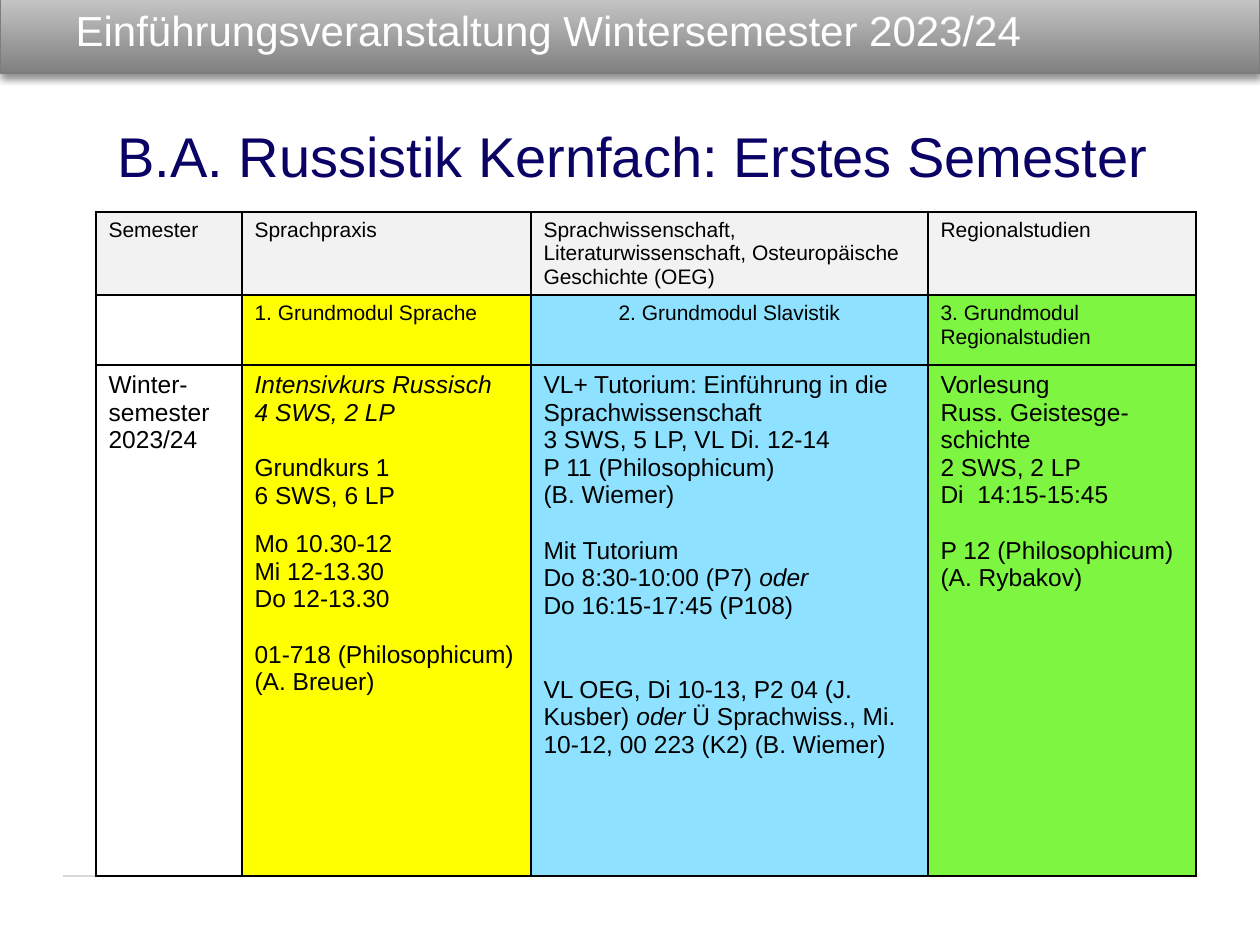
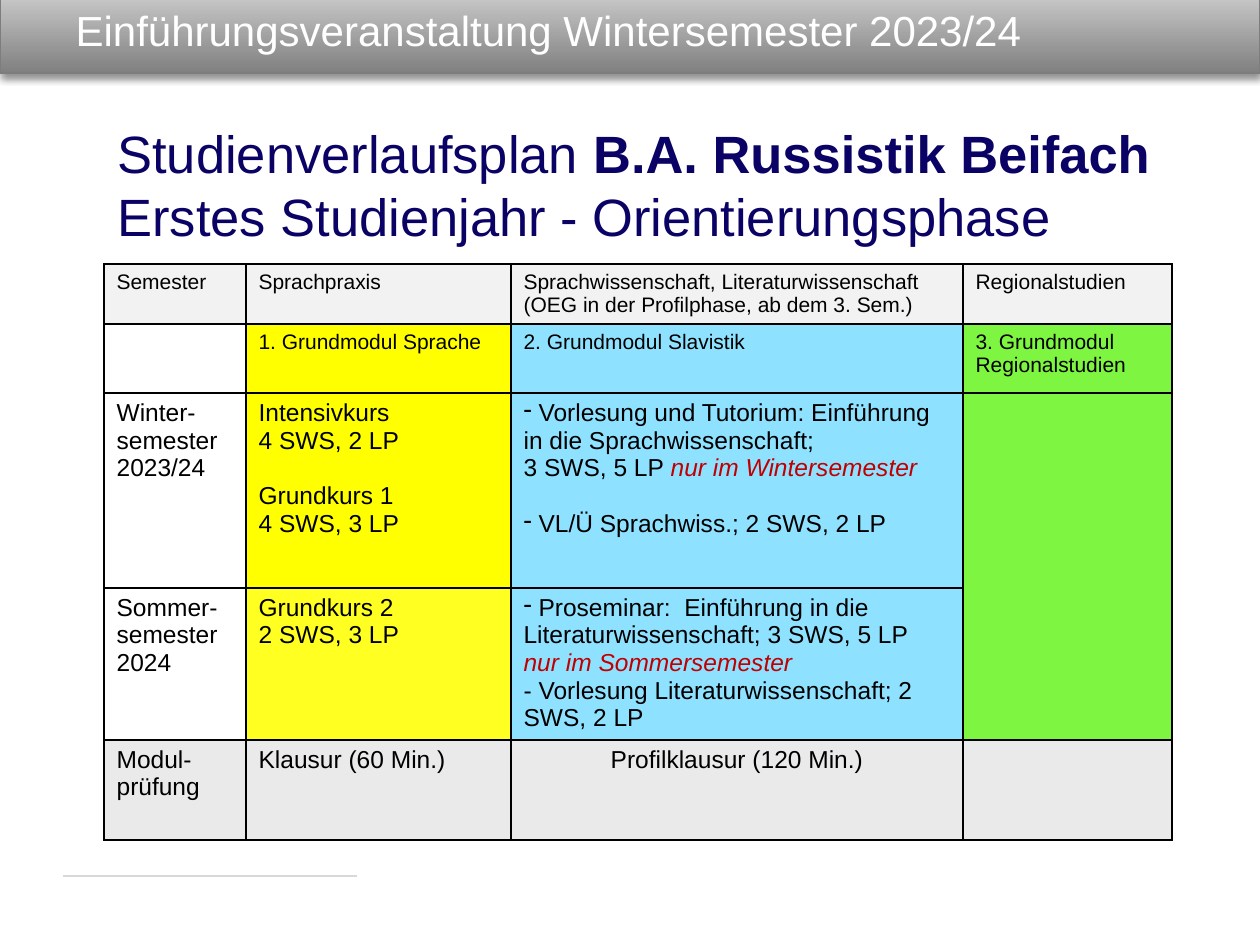
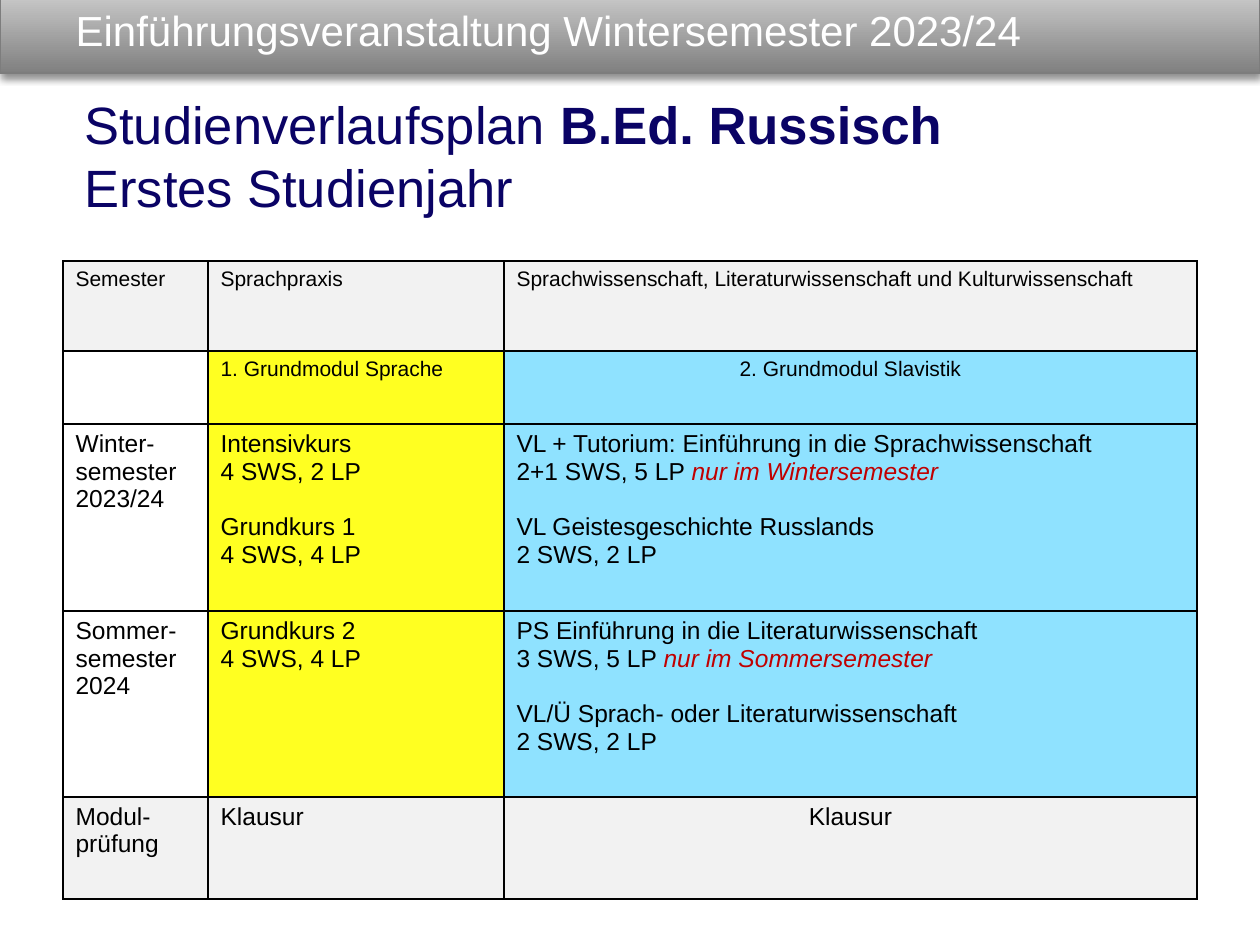
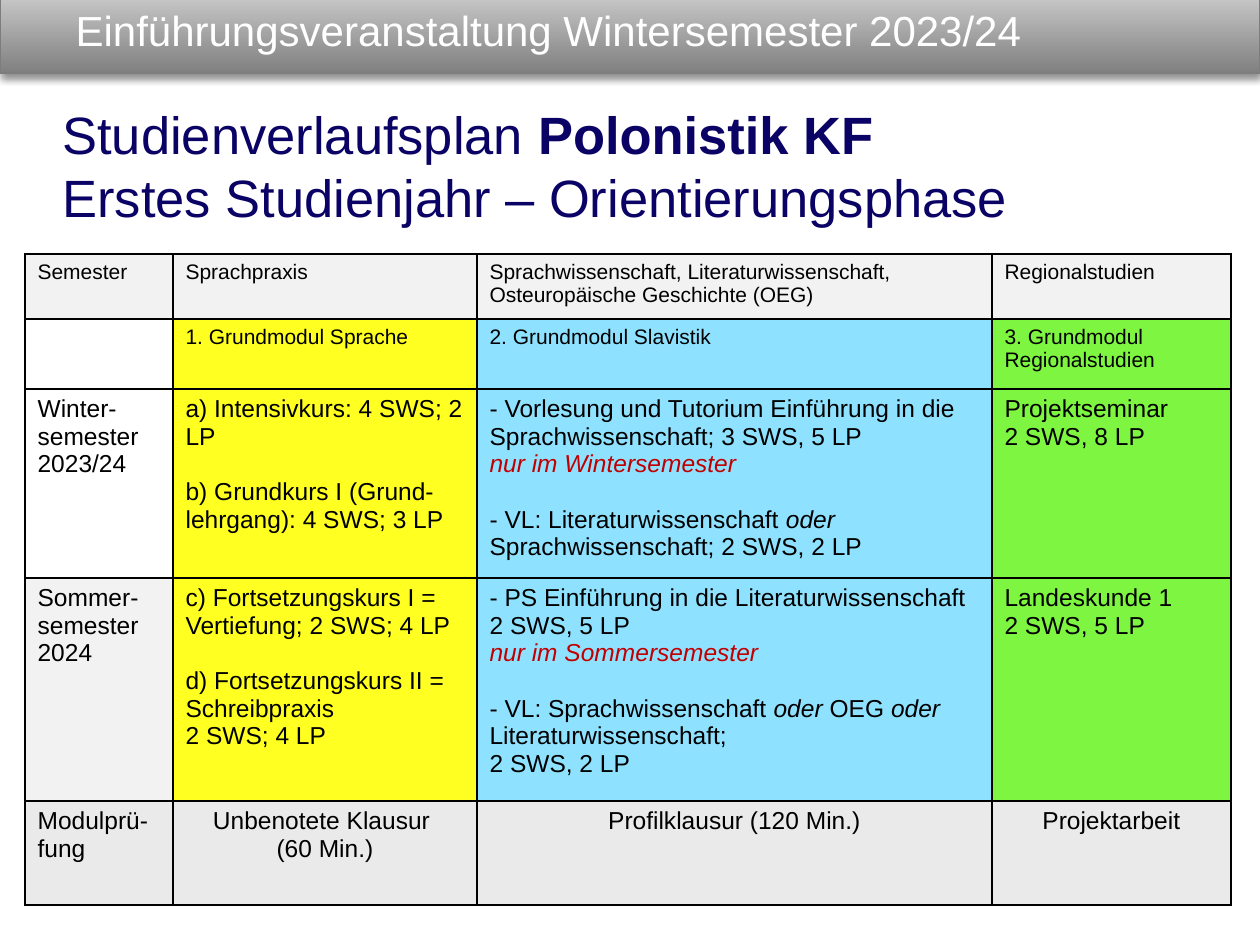
from dataclasses import dataclass

from pptx import Presentation
from pptx.dml.color import RGBColor
from pptx.enum.shapes import MSO_CONNECTOR, MSO_SHAPE
from pptx.enum.text import MSO_ANCHOR, MSO_AUTO_SIZE, PP_ALIGN
from pptx.oxml import parse_xml
from pptx.oxml.ns import nsdecls, qn
from pptx.util import Emu, Pt

# Shared style
FONT = "Arial"
BLACK, WHITE, NAVY, RED = "000000", "FFFFFF", "0A0365", "C00000"
HEADER = "Einführungsveranstaltung Wintersemester 2023/24"
FILLS = {
    "-": None,        # plain
    "h": "F2F2F2",    # heading grey
    "e": "EAEAEA",    # exam grey
    "Y": "FFFF00",    # language module
    "y": "FFFF21",    # language module, lighter
    "b": "8FE2FF",    # Slavic studies module
    "g": "7DF541",    # regional studies module
}
HEAD_SIZE, BODY_SIZE = 12, 14
GAP = 16              # one body line, in points


@dataclass(frozen=True)
class Run:
    text: str
    bold: bool = False
    italic: bool = False
    color: str | None = None


@dataclass(frozen=True)
class Para:
    runs: tuple[Run, ...]
    before: int = 0
    center: bool = False
    dash: bool = False


@dataclass(frozen=True)
class Box:
    x: int
    y: int
    w: int
    h: int


@dataclass(frozen=True)
class Plan:
    heading: list[Para]
    heading_box: Box
    heading_size: int
    left: int
    top: int
    cols: list[int]
    rows: list[int]
    fills: list[str]
    cells: list[list[list[Para]]]
    merge: tuple[int, int, int, int] | None = None


def px(n: int) -> Emu:
    return Emu(round(n * 914400 / 126))


def rgb(value: str) -> RGBColor:
    return RGBColor.from_string(value)


# Text building
def line(*parts: str | Run, before: int = 0, center: bool = False, dash: bool = False) -> Para:
    runs = tuple(Run(part) if isinstance(part, str) else part for part in parts)
    return Para(runs, before, center, dash)


def lines(*texts: str) -> list[Para]:
    return [line(text) for text in texts]


def centered(*texts: str) -> list[Para]:
    return [line(text, center=True) for text in texts]


def italic(text: str) -> Run:
    return Run(text, italic=True)


def bold(text: str) -> Run:
    return Run(text, bold=True)


def only_in(season: str) -> Run:
    return Run(f"nur im {season}semester", italic=True, color=RED)


def write(tf, paras: list[Para], size: int, color: str) -> None:
    for i, para in enumerate(paras):
        p = tf.paragraphs[0] if i == 0 else tf.add_paragraph()
        p.alignment = PP_ALIGN.CENTER if para.center else PP_ALIGN.LEFT
        if para.before:
            p.space_before = Pt(para.before)
        if para.dash:
            pPr = p._p.get_or_add_pPr()
            pPr.set("marL", "0")
            pPr.set("indent", "0")
            pPr.append(parse_xml(f'<a:buChar {nsdecls("a")} char="-"/>'))
        for run in para.runs:
            r = p.add_run()
            r.text = run.text
            r.font.name = FONT
            r.font.size = Pt(size)
            r.font.bold = run.bold
            r.font.italic = run.italic
            r.font.color.rgb = rgb(run.color or color)


# Band and footer line, placed once on the layout
def decorate_layout(s, layout) -> None:
    band = s.shapes.add_shape(MSO_SHAPE.RECTANGLE, px(0), px(-10), px(1260), px(83))
    band.fill.gradient()
    band.fill.gradient_angle = 90
    for stop, color in zip(band.fill.gradient_stops, ("808080", "CDCDCD")):
        stop.color.rgb = rgb(color)
    for stop, position in zip(band.fill.gradient_stops, (0, 1)):
        stop.position = position
    band.line.color.rgb = rgb("7D7D7D")
    band.line.width = Pt(0.75)
    band.shadow.inherit = False
    band.element.spPr.find(qn("a:effectLst")).append(parse_xml(
        f'<a:outerShdw {nsdecls("a")} blurRad="{Pt(4)}" dist="{Pt(3)}" dir="5400000" rotWithShape="0">'
        f'<a:srgbClr val="{BLACK}"><a:alpha val="43000"/></a:srgbClr></a:outerShdw>'))

    rule = s.shapes.add_connector(MSO_CONNECTOR.STRAIGHT, px(63), px(876), px(357), px(876))
    rule.line.color.rgb = rgb("D8D8D8")
    rule.line.width = Pt(0.75)
    rule.element.spPr.append(parse_xml(f'<a:effectLst {nsdecls("a")}/>'))

    for shape in (rule, band):
        layout.shapes.element.insert(2, shape.element)


def add_header(s) -> None:
    title = s.shapes.title
    title.left, title.top, title.width, title.height = px(63), px(0), px(1168), px(59)
    tf = title.text_frame
    tf.auto_size = MSO_AUTO_SIZE.NONE
    tf.vertical_anchor = MSO_ANCHOR.MIDDLE
    write(tf, lines(HEADER), 24, WHITE)


def add_heading(s, plan: Plan) -> None:
    box = plan.heading_box
    sp = s.shapes.add_textbox(px(box.x), px(box.y), px(box.w), px(box.h))
    tf = sp.text_frame
    tf.word_wrap = True
    tf.auto_size = MSO_AUTO_SIZE.SHAPE_TO_FIT_TEXT
    write(tf, plan.heading, plan.heading_size, NAVY)


# Study plan table
def set_borders(cell) -> None:
    tcPr = cell._tc.get_or_add_tcPr()
    for i, side in enumerate("LRTB"):
        tcPr.insert(i, parse_xml(
            f'<a:ln{side} {nsdecls("a")} w="{Pt(1)}"><a:solidFill>'
            f'<a:srgbClr val="{BLACK}"/></a:solidFill></a:ln{side}>'))


def add_plan_table(s, plan: Plan) -> None:
    table = s.shapes.add_table(
        len(plan.rows), len(plan.cols), px(plan.left), px(plan.top),
        px(sum(plan.cols)), px(sum(plan.rows))).table
    table.first_row = table.horz_banding = False
    for column, width in zip(table.columns, plan.cols):
        column.width = px(width)
    for row, height in zip(table.rows, plan.rows):
        row.height = px(height)
    for i, (fills, contents) in enumerate(zip(plan.fills, plan.cells)):
        size = HEAD_SIZE if i < 2 else BODY_SIZE
        for j, (key, paras) in enumerate(zip(fills, contents)):
            cell = table.cell(i, j)
            if FILLS[key]:
                cell.fill.solid()
                cell.fill.fore_color.rgb = rgb(FILLS[key])
            else:
                cell.fill.background()
            set_borders(cell)
            write(cell.text_frame, paras, size, BLACK)
    if plan.merge:
        top, left, bottom, right = plan.merge
        table.cell(top, left).merge(table.cell(bottom, right))


# Content that several plans share
SEMESTER = lines("Semester")
PRACTICE = lines("Sprachpraxis")
REGIONAL = lines("Regionalstudien")
MODULE_1 = lines("1. Grundmodul Sprache")
MODULE_2 = "2. Grundmodul Slavistik"
MODULE_3 = lines("3. Grundmodul Regionalstudien")
WINTER = lines("Winter-semester 2023/24")
SUMMER = lines("Sommer-semester 2024")
EXAM = lines("Modul-prüfung")
LING_LIT_OEG = lines("Sprachwissenschaft, Literaturwissenschaft, Osteuropäische Geschichte (OEG)")
EMPTY: list[Para] = []


def language_courses(basic_load: str) -> list[Para]:
    return [*lines("Intensivkurs", "4 SWS, 2 LP"),
            line("Grundkurs 1", before=GAP), line(basic_load)]


def study_heading(degree: str, second_line: str) -> list[Para]:
    return [line("Studienverlaufsplan ", bold(degree)), line(second_line)]


PLANS = [
    # B.A. Russistik Kernfach
    Plan(
        heading=lines("B.A. Russistik Kernfach: Erstes Semester"),
        heading_box=Box(105, 115, 1062, 81), heading_size=32,
        left=96, top=212, cols=[146, 289, 397, 268], rows=[83, 70, 511],
        fills=["hhhh", "-Ybg", "-Ybg"],
        cells=[
            [SEMESTER, PRACTICE, LING_LIT_OEG, REGIONAL],
            [EMPTY, MODULE_1, centered(MODULE_2), MODULE_3],
            [WINTER,
             [line(italic("Intensivkurs Russisch")), line(italic("4 SWS, 2 LP")),
              line("Grundkurs 1", before=GAP), line("6 SWS, 6 LP"),
              line("Mo 10.30-12", before=12), *lines("Mi 12-13.30", "Do 12-13.30"),
              line("01-718 (Philosophicum)", before=GAP), line("(A. Breuer)")],
             [*lines("VL+ Tutorium: Einführung in die Sprachwissenschaft",
                     "3 SWS, 5 LP, VL Di. 12-14", "P 11 (Philosophicum)", "(B. Wiemer)"),
              line("Mit Tutorium", before=GAP),
              line("Do 8:30-10:00 (P7) ", italic("oder")), line("Do 16:15-17:45 (P108)"),
              line("VL OEG, Di 10-13, P2 04 (J. Kusber) ", italic("oder "),
                   "Ü Sprachwiss., Mi. 10-12, 00 223 (K2) (B. Wiemer)", before=2 * GAP)],
             [*lines("Vorlesung", "Russ. Geistesge-schichte", "2 SWS, 2 LP", "Di  14:15-15:45"),
              line("P 12 (Philosophicum)", before=GAP), line("(A. Rybakov)")]],
        ],
    ),
    # B.A. Russistik Beifach
    Plan(
        heading=study_heading("B.A. Russistik Beifach", "Erstes Studienjahr - Orientierungsphase"),
        heading_box=Box(105, 115, 1062, 139), heading_size=30,
        left=104, top=264, cols=[142, 265, 452, 209], rows=[60, 69, 195, 152, 100],
        fills=["hhhh", "-Ybg", "-Ybg", "-ybg", "eeee"],
        merge=(2, 3, 3, 3),
        cells=[
            [SEMESTER, PRACTICE,
             lines("Sprachwissenschaft, Literaturwissenschaft",
                   "(OEG in der Profilphase, ab dem 3. Sem.)"), REGIONAL],
            [EMPTY, MODULE_1, lines(MODULE_2), MODULE_3],
            [WINTER, language_courses("4 SWS, 3 LP"),
             [line(" Vorlesung und Tutorium: Einführung in die Sprachwissenschaft;", dash=True),
              line("3 SWS, 5 LP ", only_in("Winter")),
              line(" VL/Ü Sprachwiss.; 2 SWS, 2 LP", before=GAP, dash=True)], EMPTY],
            [SUMMER, lines("Grundkurs 2", "2 SWS, 3 LP"),
             [line(" Proseminar:  Einführung in die Literaturwissenschaft; 3 SWS, 5 LP", dash=True),
              line(only_in("Sommer")),
              line("- Vorlesung Literaturwissenschaft; 2 SWS, 2 LP")], EMPTY],
            [EXAM, lines("Klausur (60 Min.)"), centered("Profilklausur (120 Min.)"), EMPTY],
        ],
    ),
    # B.Ed. Russisch
    Plan(
        heading=study_heading("B.Ed. Russisch", "Erstes Studienjahr"),
        heading_box=Box(72, 86, 1094, 139), heading_size=30,
        left=63, top=261, cols=[145, 296, 693], rows=[90, 73, 187, 186, 102],
        fills=["hhh", "-yb", "-yb", "-yb", "hhh"],
        cells=[
            [SEMESTER, PRACTICE,
             lines("Sprachwissenschaft, Literaturwissenschaft und Kulturwissenschaft")],
            [EMPTY, MODULE_1, centered(MODULE_2)],
            [lines("Winter-semester", "2023/24"), language_courses("4 SWS, 4 LP"),
             [line("VL + Tutorium: Einführung in die Sprachwissenschaft"),
              line("2+1 SWS, 5 LP ", only_in("Winter")),
              line("VL Geistesgeschichte Russlands", before=GAP), line("2 SWS, 2 LP")]],
            [SUMMER, lines("Grundkurs 2", "4 SWS, 4 LP"),
             [line("PS Einführung in die Literaturwissenschaft"),
              line("3 SWS, 5 LP ", only_in("Sommer")),
              line("VL/Ü Sprach- oder Literaturwissenschaft", before=GAP), line("2 SWS, 2 LP")]],
            [EXAM, lines("Klausur"), centered("Klausur")],
        ],
    ),
    # Polonistik Kernfach
    Plan(
        heading=study_heading("Polonistik KF", "Erstes Studienjahr – Orientierungsphase"),
        heading_box=Box(50, 96, 1181, 139), heading_size=30,
        left=25, top=254, cols=[148, 304, 515, 239], rows=[65, 70, 189, 223, 104],
        fills=["hhhh", "-ybg", "-ybg", "hybg", "eeee"],
        cells=[
            [SEMESTER, PRACTICE, LING_LIT_OEG, REGIONAL],
            [EMPTY, MODULE_1, lines(MODULE_2), MODULE_3],
            [WINTER,
             [line("a) Intensivkurs: 4 SWS; 2 LP"),
              line("b) Grundkurs I (Grund-lehrgang): 4 SWS; 3 LP", before=GAP)],
             [*lines("- Vorlesung und Tutorium Einführung in die", "Sprachwissenschaft; 3 SWS, 5 LP"),
              line(only_in("Winter")),
              line("- VL: Literaturwissenschaft ", italic("oder"),
                   " Sprachwissenschaft; 2 SWS, 2 LP", before=GAP)],
             lines("Projektseminar", "2 SWS, 8 LP")],
            [SUMMER,
             [line("c) Fortsetzungskurs I = Vertiefung; 2 SWS; 4 LP"),
              line("d) Fortsetzungskurs II = Schreibpraxis", before=GAP), line("2 SWS; 4 LP")],
             [line("- PS Einführung in die Literaturwissenschaft 2 SWS, 5 LP"),
              line(only_in("Sommer")),
              line("- VL: Sprachwissenschaft ", italic("oder "), "OEG ", italic("oder "),
                   "Literaturwissenschaft;", before=GAP),
              line("2 SWS, 2 LP")],
             lines("Landeskunde 1", "2 SWS, 5 LP")],
            [lines("Modulprü-fung"), centered("Unbenotete Klausur ", "(60 Min.)"),
             centered("Profilklausur (120 Min.)"), centered("Projektarbeit")],
        ],
    ),
]


def main() -> None:
    prs = Presentation()
    prs.slide_width, prs.slide_height = px(1260), px(945)
    layout = prs.slide_layouts[5]
    for i, plan in enumerate(PLANS):
        s = prs.slides.add_slide(layout)
        if i == 0:
            decorate_layout(s, layout)
        add_header(s)
        add_plan_table(s, plan)
        add_heading(s, plan)
    prs.save("out.pptx")


if __name__ == "__main__":
    main()
